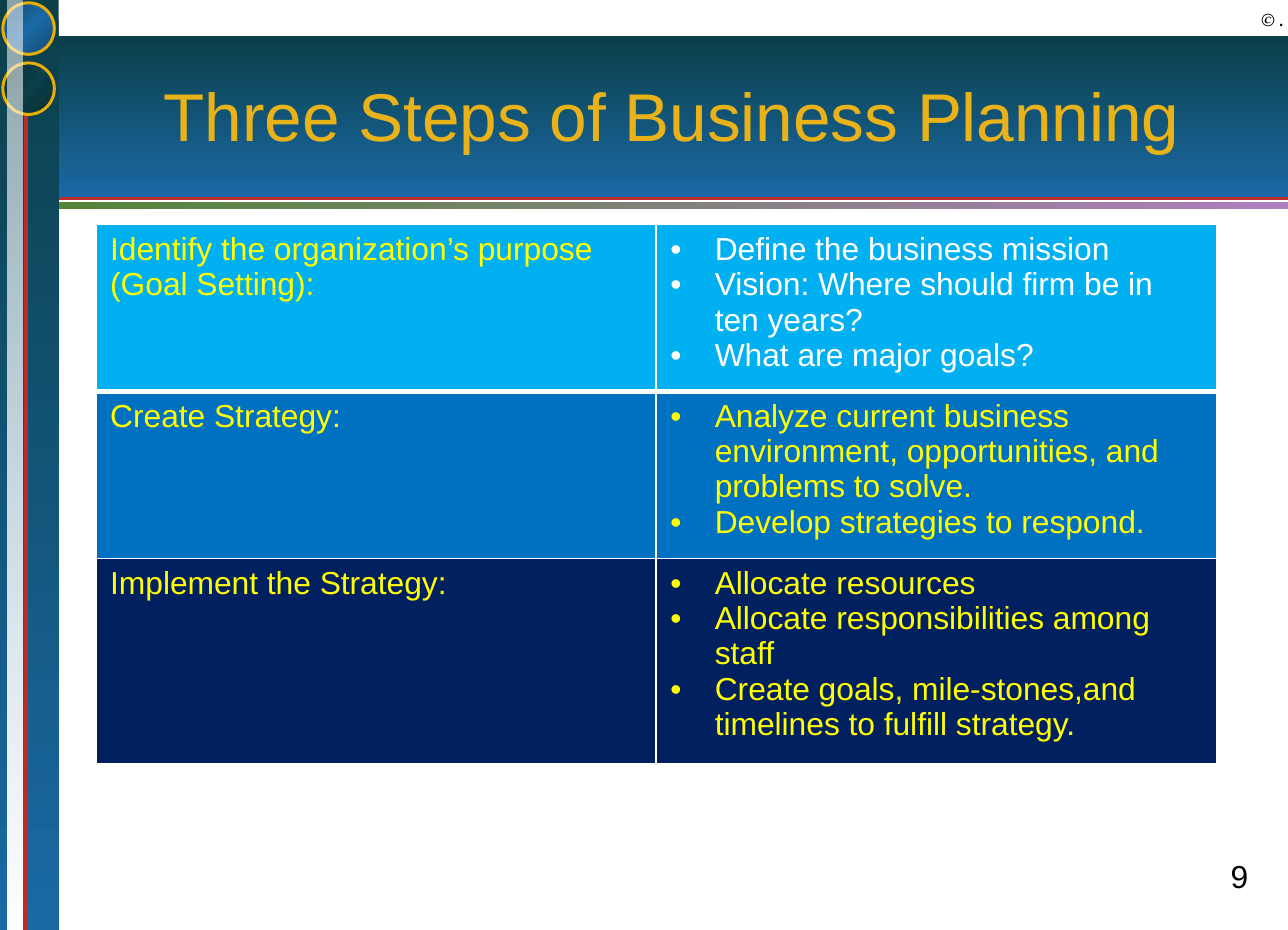
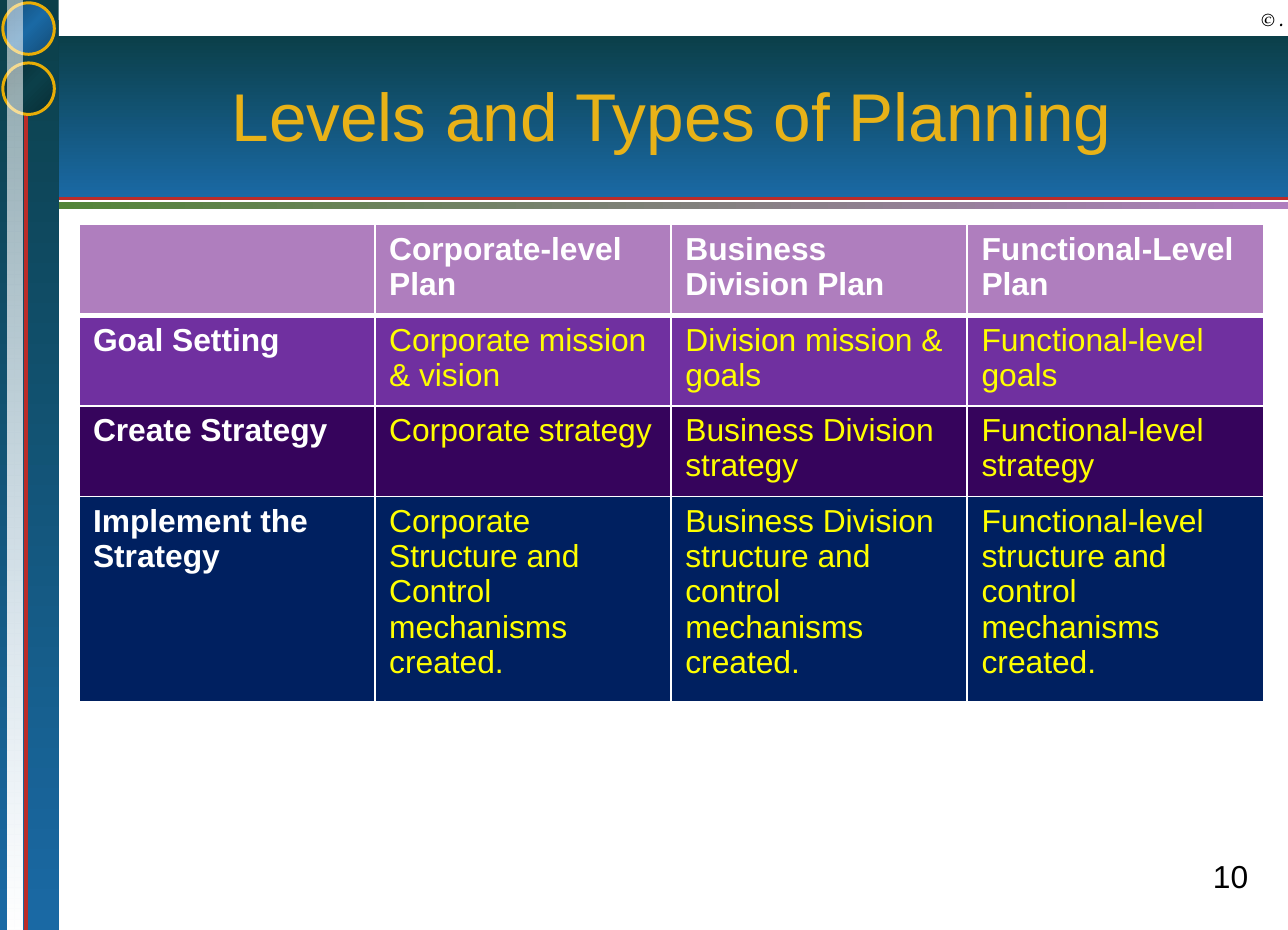
from lxml import etree
from pptx import Presentation
from pptx.dml.color import RGBColor
from pptx.enum.shapes import MSO_CONNECTOR, MSO_SHAPE
from pptx.enum.text import MSO_ANCHOR, PP_ALIGN
from pptx.oxml import parse_xml
from pptx.oxml.ns import nsdecls, qn
from pptx.util import Inches, Pt

RECTANGLE, OVAL = MSO_SHAPE.RECTANGLE, MSO_SHAPE.OVAL
STRAIGHT = MSO_CONNECTOR.STRAIGHT
TOP, MIDDLE, BOTTOM = MSO_ANCHOR.TOP, MSO_ANCHOR.MIDDLE, MSO_ANCHOR.BOTTOM
LEFT, CENTER, RIGHT = PP_ALIGN.LEFT, PP_ALIGN.CENTER, PP_ALIGN.RIGHT

COLUMNS, ROWS = 90, 65
CELL = Inches(0.1)
RAIL = 4.1
CONTENT_LEFT = 3.9
TABLE_TOP = 15.7
RING_SIZE, RING_STEP = 3.6, 4.2

WHITE, BLACK, YELLOW = "FFFFFF", "000000", "FFFF00"
GOLD, RING_GOLD, RED = "E8B218", "E8AD06", "BB2C29"
GREEN, LILAC, NAVY = "538438", "AF7EBE", "002060"
TEAL, BLUE = "0B3F49", "1A69A4"
DARK_TEAL, DARK_BLUE = "082D34", "134B75"

BODY = {"name": "Arial", "size": Pt(16), "bold": False}
TITLE = {**BODY, "size": Pt(34)}
MARK = {"name": "TeX Gyre Pagella", "size": Pt(9), "bold": True, "italic": True}


def color(value):
    """Turn a hex string into a colour."""
    return RGBColor.from_string(value)


def grid(*lengths):
    """Turn grid units into slide lengths."""
    return [round(length * CELL) for length in lengths]


class Deck:
    """Hold the style and the current slide, and draw each kind of element."""

    def __init__(self):
        """Open a presentation of the chosen size."""
        self.presentation = Presentation()
        self.presentation.slide_width, self.presentation.slide_height = grid(COLUMNS, ROWS)
        self.slide = None

    def gradient_shape(self, kind, box, colors, angle, outline=None, first_alpha=100):
        """Draw a shape with evenly spaced gradient colours."""
        shape = self.slide.shapes.add_shape(kind, *grid(*box))
        shape.shadow.inherit = False
        if outline:
            shape.line.color.rgb, shape.line.width = color(outline), Pt(1.5)
        else:
            shape.line.fill.background()
        stops = ""
        for index, value in enumerate(colors):
            position = index * 100000 // (len(colors) - 1)
            alpha = 100 if index else first_alpha
            stops += (f'<a:gs pos="{position}"><a:srgbClr val="{value}">'
                      f'<a:alpha val="{alpha * 1000}"/></a:srgbClr></a:gs>')
        gradient = parse_xml(
            f'<a:gradFill {nsdecls("a")} rotWithShape="1"><a:gsLst>{stops}</a:gsLst>'
            f'<a:lin ang="{angle * 60000}" scaled="0"/></a:gradFill>')
        shape.element.spPr.find(qn("a:prstGeom")).addnext(gradient)

    def rule(self, start, end, width):
        """Draw a straight red line."""
        line = self.slide.shapes.add_connector(STRAIGHT, *grid(*start, *end))
        line.line.color.rgb, line.line.width = color(RED), Pt(width)
        etree.SubElement(line.element.spPr, qn("a:effectLst"))

    def styled_run(self, paragraph, words, style, text_color, align=LEFT):
        """Put one styled run into a paragraph."""
        paragraph.alignment = align
        run = paragraph.add_run()
        run.text = words
        for name, value in style.items():
            setattr(run.font, name, value)
        run.font.color.rgb = color(text_color)
        return run

    def text(self, box, words, style, text_color, align, anchor=TOP, wrap=True, inset=(0.9, 0.45)):
        """Add a text box and return its run."""
        frame = self.slide.shapes.add_textbox(*grid(*box)).text_frame
        horizontal, vertical = grid(*inset)
        settings = {"word_wrap": wrap, "vertical_anchor": anchor,
                    "margin_left": horizontal, "margin_right": horizontal,
                    "margin_top": vertical, "margin_bottom": vertical}
        for name, value in settings.items():
            setattr(frame, name, value)
        return self.styled_run(frame.paragraphs[0], words, style, text_color, align)

    def title(self, words):
        """Add the gold title with its dark shadow."""
        run = self.text((CONTENT_LEFT, 2.6, COLUMNS - CONTENT_LEFT, 10.8), words,
                        TITLE, GOLD, CENTER, MIDDLE)
        shadow = parse_xml(
            f'<a:effectLst {nsdecls("a")}><a:outerShdw dist="35921" dir="2700000">'
            f'<a:srgbClr val="{BLACK}"/></a:outerShdw></a:effectLst>')
        run._r.get_or_add_rPr().find(qn("a:solidFill")).addnext(shadow)

    def bullet(self, paragraph):
        """Give a paragraph a hanging bullet."""
        properties = paragraph._p.get_or_add_pPr()
        indent = Inches(0.31)
        properties.set("marL", str(indent))
        properties.set("indent", str(-indent))
        etree.SubElement(properties, qn("a:buFont")).set("typeface", "Arial")
        etree.SubElement(properties, qn("a:buChar")).set("char", "•")

    def borders(self, cell, widths):
        """Draw white borders around a table cell."""
        properties = cell._tc.get_or_add_tcPr()
        for index, (side, width) in enumerate(widths.items()):
            properties.insert(index, parse_xml(
                f'<a:ln{side} {nsdecls("a")} w="{Pt(width)}"><a:solidFill>'
                f'<a:srgbClr val="{WHITE}"/></a:solidFill></a:ln{side}>'))

    def table(self, left, column_width, row_heights, fills, rows, is_white, bold_white, bullet_column=None):
        """Add a table with one fill per row."""
        count = len(rows[0])
        frame = self.slide.shapes.add_table(
            len(rows), count,
            *grid(left, TABLE_TOP, column_width * count, sum(row_heights)))
        table = frame.table
        table.first_row = table.horz_banding = False
        for column in table.columns:
            column.width, = grid(column_width)
        for row, (height, fill, texts) in enumerate(zip(row_heights, fills, rows)):
            table.rows[row].height, = grid(height)
            for column, words in enumerate(texts):
                cell = table.cell(row, column)
                cell.fill.solid()
                cell.fill.fore_color.rgb = color(fill)
                self.borders(cell, {"L": 1, "R": 1, "T": 3 if row == 1 else 1,
                                    "B": 3 if row == 0 else 1})
                white = is_white(row, column)
                style = {**BODY, "bold": white and bold_white}
                text_frame = cell.text_frame
                for index, line in enumerate(words.splitlines()):
                    paragraph = text_frame.add_paragraph() if index else text_frame.paragraphs[0]
                    self.styled_run(paragraph, line, style, WHITE if white else YELLOW)
                    if column == bullet_column:
                        self.bullet(paragraph)

    def new_slide(self, title, number):
        """Start a slide with the shared bands, rail, footer and title."""
        self.slide = self.presentation.slides.add_slide(self.presentation.slide_layouts[6])
        self.gradient_shape(RECTANGLE, (CONTENT_LEFT, 14.1, COLUMNS - CONTENT_LEFT, 0.5),
                            (GREEN, LILAC), 0)
        self.gradient_shape(RECTANGLE, (0, 2.5, COLUMNS, 11.3), (TEAL, BLUE), 90)
        self.rule((CONTENT_LEFT, 13.9), (COLUMNS, 13.9), 1.5)
        self.gradient_shape(RECTANGLE, (0, 0, RAIL, ROWS), (TEAL, BLUE), 90)
        self.rule((1.8, 7.9), (1.8, ROWS), 2.25)
        for index, (edge, core) in enumerate(((DARK_BLUE, BLUE), (DARK_TEAL, TEAL))):
            self.gradient_shape(OVAL, (0.2, 0.2 + index * RING_STEP, RING_SIZE, RING_SIZE),
                                (edge, core, edge), 45, RING_GOLD)
        self.gradient_shape(RECTANGLE, (0.5, 0, 1.1, ROWS), (WHITE, WHITE), 90, first_alpha=52)
        self.text((80.3, 59.4, 7.9, 3.7), str(number), BODY, BLACK, RIGHT, inset=(1, 0.5))
        self.text((88.1, 0.6, 1.6, 1.5), "© .", MARK, BLACK, RIGHT, BOTTOM, False, (0, 0))
        self.title(title)


def main():
    """Build and save the two planning slides."""
    deck = Deck()

    deck.new_slide("Three Steps of Business Planning", 9)
    deck.table(
        6.7, 39.15, (10.8, 10.8, 13.3), ("00B0F0", "0070C0", NAVY),
        [("Identify the organization’s purpose (Goal Setting):",
          "Define the business mission\n"
          "Vision: Where should firm be in ten years?\n"
          "What are major goals?"),
         ("Create Strategy:",
          "Analyze current business environment, opportunities, and problems to solve.\n"
          "Develop strategies to respond."),
         ("Implement the Strategy:",
          "Allocate resources\n"
          "Allocate responsibilities among staff\n"
          "Create goals, mile-stones,and timelines to fulfill strategy.")],
        lambda row, column: (row, column) == (0, 1), False, bullet_column=1)

    deck.new_slide("Levels and Types of Planning", 10)
    deck.table(
        5.5, 20.7, (5.95, 5.95, 5.95, 13.3), (LILAC, "7030A0", "36045C", NAVY),
        [("", "Corporate-level Plan", "Business Division Plan", "Functional-Level Plan"),
         ("Goal Setting", "Corporate mission & vision", "Division mission & goals",
          "Functional-level goals"),
         ("Create Strategy", "Corporate strategy", "Business Division strategy",
          "Functional-level strategy"),
         ("Implement the Strategy",
          "Corporate Structure and\nControl mechanisms created.",
          "Business Division structure and control mechanisms created.",
          "Functional-level structure and control mechanisms created.")],
        lambda row, column: row == 0 or column == 0, True)

    deck.presentation.save("out.pptx")


if __name__ == "__main__":
    main()
